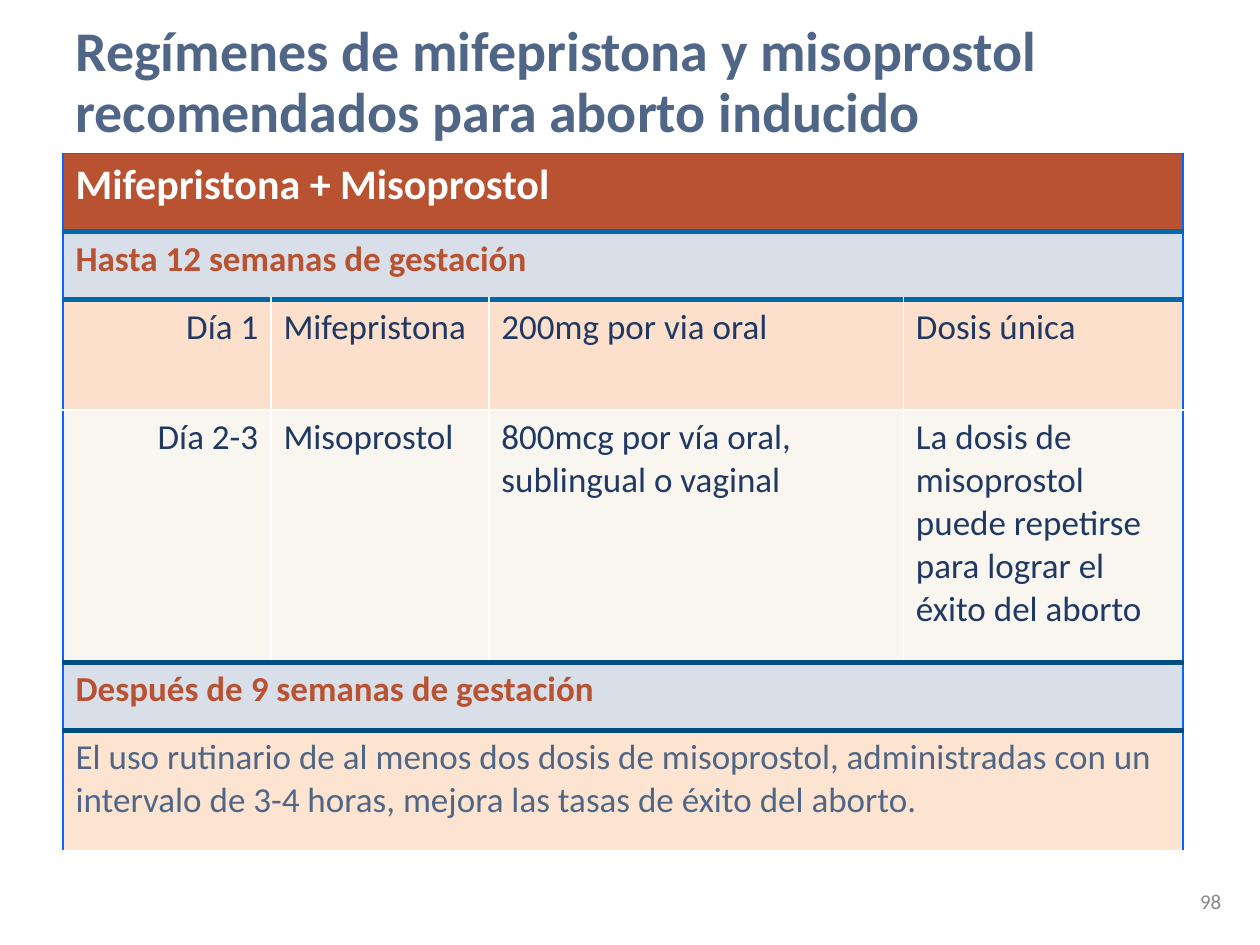
from lxml.etree import SubElement
from pptx import Presentation
from pptx.dml.color import RGBColor
from pptx.enum.text import MSO_ANCHOR, PP_ALIGN
from pptx.oxml.ns import qn
from pptx.util import Pt

TITLE = "Regímenes de mifepristona y misoprostol recomendados para aborto inducido"
NUMBER = "98"
ROWS = [
    ("header", 44.64, ["Mifepristona + Misoprostol"]),
    ("section", 38.88, ["Hasta 12 semanas de gestación"]),
    ("day1", 63.36, ["Día 1", "Mifepristona", "200mg por via oral", "Dosis única"]),
    ("day2", 144, ["Día 2-3", "Misoprostol", "800mcg por vía oral, sublingual o vaginal",
                   "La dosis de misoprostol puede repetirse para lograr el éxito del aborto"]),
    ("section", 38.88, ["Después de 9 semanas de gestación"]),
    ("note", 69.12, ["El uso rutinario de al menos dos dosis de misoprostol, administradas con un "
                     "intervalo de 3-4 horas, mejora las tasas de éxito del aborto."]),
]
COLS = [118.8, 124.56, 236.88, 159.84]

THEME = {
    "font": "Calibri",
    "title": {"size": 32, "color": "506687", "bold": True},
    "number": {"size": 12, "color": "888888", "bold": False},
    "header": {"size": 24, "color": "FFFFFF", "bold": True, "fill": "B85231"},
    "section": {"size": 20, "color": "B85231", "bold": True, "fill": "D9DFE9"},
    "day1": {"size": 20, "color": "1F3864", "bold": False, "fill": "FDE0CC"},
    "day2": {"size": 20, "color": "1F3864", "bold": False, "fill": "F8F6EF"},
    "note": {"size": 20, "color": "506687", "bold": False, "fill": "FDE4D0"},
    "outer": ("0066FF", 1),
    "inner": ("FFFFFF", 1),
    "upper": ("0069AA", 3),
    "lower": ("004E7F", 3),
}
RULES = ["outer", "upper", "upper", "inner", "lower", "lower", None]


def write(tf, text, style, align=PP_ALIGN.LEFT, spacing=None):
    tf.word_wrap = True
    p = tf.paragraphs[0]
    p.alignment = align
    p.line_spacing = spacing
    r = p.add_run()
    r.text = text
    fmt = THEME[style]
    for key, value in {"name": THEME["font"], "size": Pt(fmt["size"]), "bold": fmt["bold"]}.items():
        setattr(r.font, key, value)
    r.font.color.rgb = RGBColor.from_string(fmt["color"])


def add_text(s, box, *args):
    tf = s.shapes.add_textbox(*map(Pt, box)).text_frame
    tf.vertical_anchor = MSO_ANCHOR.MIDDLE
    write(tf, *args)


def set_borders(cell, borders):
    tcPr = cell._tc.get_or_add_tcPr()
    for side in "LRTB":
        if borders.get(side):
            color, width = THEME[borders[side]]
            ln = SubElement(tcPr, qn("a:ln" + side), w=str(Pt(width)))
            SubElement(SubElement(ln, qn("a:solidFill")), qn("a:srgbClr"), val=color)


def add_regimens(s, left, top):
    height = sum(h for _, h, _ in ROWS)
    frame = s.shapes.add_table(len(ROWS), len(COLS), Pt(left), Pt(top), Pt(sum(COLS)), Pt(height))
    table = frame.table
    table.first_row = table.horz_banding = False
    for col, width in zip(table.columns, COLS):
        col.width = Pt(width)
    last = len(COLS) - 1
    for i, (style, height, texts) in enumerate(ROWS):
        table.rows[i].height = Pt(height)
        merged = len(texts) == 1
        if merged:
            table.cell(i, 0).merge(table.cell(i, last))
        inner = None if merged else "inner"
        for c in range(len(COLS)):
            cell = table.cell(i, c)
            set_borders(cell, {
                "L": "outer" if c == 0 else inner,
                "R": "outer" if c == last or cell.is_merge_origin else inner,
                "T": RULES[i],
                "B": RULES[i + 1],
            })
            cell.fill.solid()
            cell.fill.fore_color.rgb = RGBColor.from_string(THEME[style]["fill"])
            if c < len(texts):
                align = PP_ALIGN.RIGHT if c == 0 and not merged else PP_ALIGN.LEFT
                write(cell.text_frame, texts[c], style, align)


def main():
    prs = Presentation()
    prs.slide_width, prs.slide_height = Pt(720), Pt(540)
    s = prs.slides.add_slide(prs.slide_layouts[6])
    add_text(s, (36, 13, 648, 70), TITLE, "title", PP_ALIGN.LEFT, 0.9)
    add_regimens(s, 36, 87.6)
    add_text(s, (537, 500.5, 168, 28.75), NUMBER, "number", PP_ALIGN.RIGHT)
    prs.save("out.pptx")


if __name__ == "__main__":
    main()
